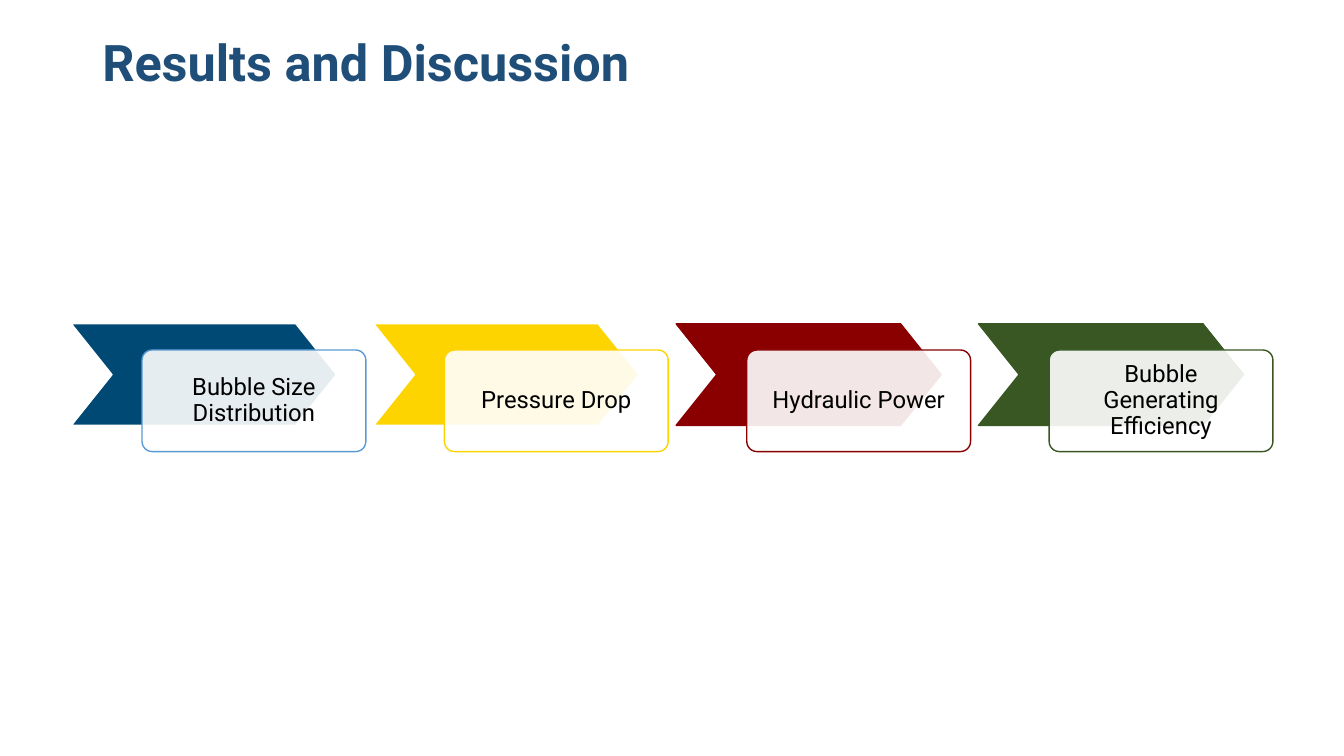
import pptx
import pptx.util
import pptx.dml.color
import pptx.enum.shapes
import pptx.enum.text
import pptx.oxml
import pptx.oxml.ns

Cm = pptx.util.Cm
Pt = pptx.util.Pt
Shape = pptx.enum.shapes.MSO_SHAPE
Align = pptx.enum.text.PP_ALIGN

STEPS = [
    # text, arrow fill, arrow line, card line
    ("Bubble Size Distribution", "004974", "FFFFFF", "5B9BD5"),
    ("Pressure Drop", "FDD400", "FFFFFF", "FDD400"),
    ("Hydraulic Power", "8A0000", "8A0000", "8A0000"),
    ("Bubble Generating Efficiency", "385723", "385723", "385723"),
]


def color(code):
    return pptx.dml.color.RGBColor.from_string(code)


def write(shape, text, size, ink, bold=False, align=Align.LEFT, pad=0.25):
    frame = shape.text_frame
    frame.text = text
    frame.word_wrap = True
    frame.auto_size = pptx.enum.text.MSO_AUTO_SIZE.NONE
    frame.vertical_anchor = pptx.enum.text.MSO_ANCHOR.MIDDLE
    frame.margin_left = frame.margin_right = Cm(pad)
    frame.margin_top = frame.margin_bottom = Cm(min(pad, 0.33) if pad > 0.25 else 0.13)
    line = frame.paragraphs[0]
    line.alignment = align
    line.line_spacing = 0.9
    font = line.runs[0].font
    font.name = "Roboto"
    font.size = Pt(size)
    font.bold = bold
    font.color.rgb = color(ink)


def draw(slide, kind, box, fill, edge, bend, alpha=100):
    """Add a filled shape; bend is its adjustment, alpha its opacity in percent."""
    shape = slide.shapes.add_shape(kind, *[Cm(n) for n in box])
    shape.shadow.inherit = False
    shape.adjustments[0] = bend
    shape.fill.solid()
    shape.fill.fore_color.rgb = color(fill)
    shape.line.color.rgb = color(edge)
    shape.line.width = Pt(1)
    if alpha < 100:
        tint = shape.fill._xPr.find(".//" + pptx.oxml.ns.qn("a:srgbClr"))
        tint.append(pptx.oxml.parse_xml(
            f'<a:alpha {pptx.oxml.ns.nsdecls("a")} val="{alpha * 1000}"/>'))
    return shape


def head(slide, box, text):
    title = slide.shapes.title
    title.left, title.top, title.width, title.height = [Cm(n) for n in box]
    write(title, text, 36, "1F4E79", bold=True)


def step(slide, box, text, fill, edge, rim):
    """Draw an arrow at the top left of the box and a card at its bottom right."""
    left, top, width, height = box
    tall = height - 0.66
    draw(slide, Shape.CHEVRON, (left, top, width - 0.74, tall), fill, edge, 0.4)
    card = draw(slide, Shape.ROUNDED_RECTANGLE,
                (left + 1.78, top + 0.66, width - 1.78, tall),
                "FFFFFF", rim, 0.1, alpha=90)
    write(card, text, 17, "000000", align=Align.CENTER, pad=0.33)


def flow(slide, box, steps):
    left, top, width, height = box
    gap = 0.2
    wide = (width - gap * (len(steps) - 1)) / len(steps)
    for i, item in enumerate(steps):
        step(slide, (left + i * (wide + gap), top, wide, height), *item)


def main():
    deck = pptx.Presentation()
    deck.slide_width = Cm(33.87)
    deck.slide_height = Cm(19.05)
    slide = deck.slides.add_slide(deck.slide_layouts[5])
    head(slide, (2.33, 0.53, 29.21, 2.21), "Results and Discussion")
    flow(slide, (1.8, 8.16, 30.28, 3.22), STEPS)
    deck.save("out.pptx")


if __name__ == "__main__":
    main()
